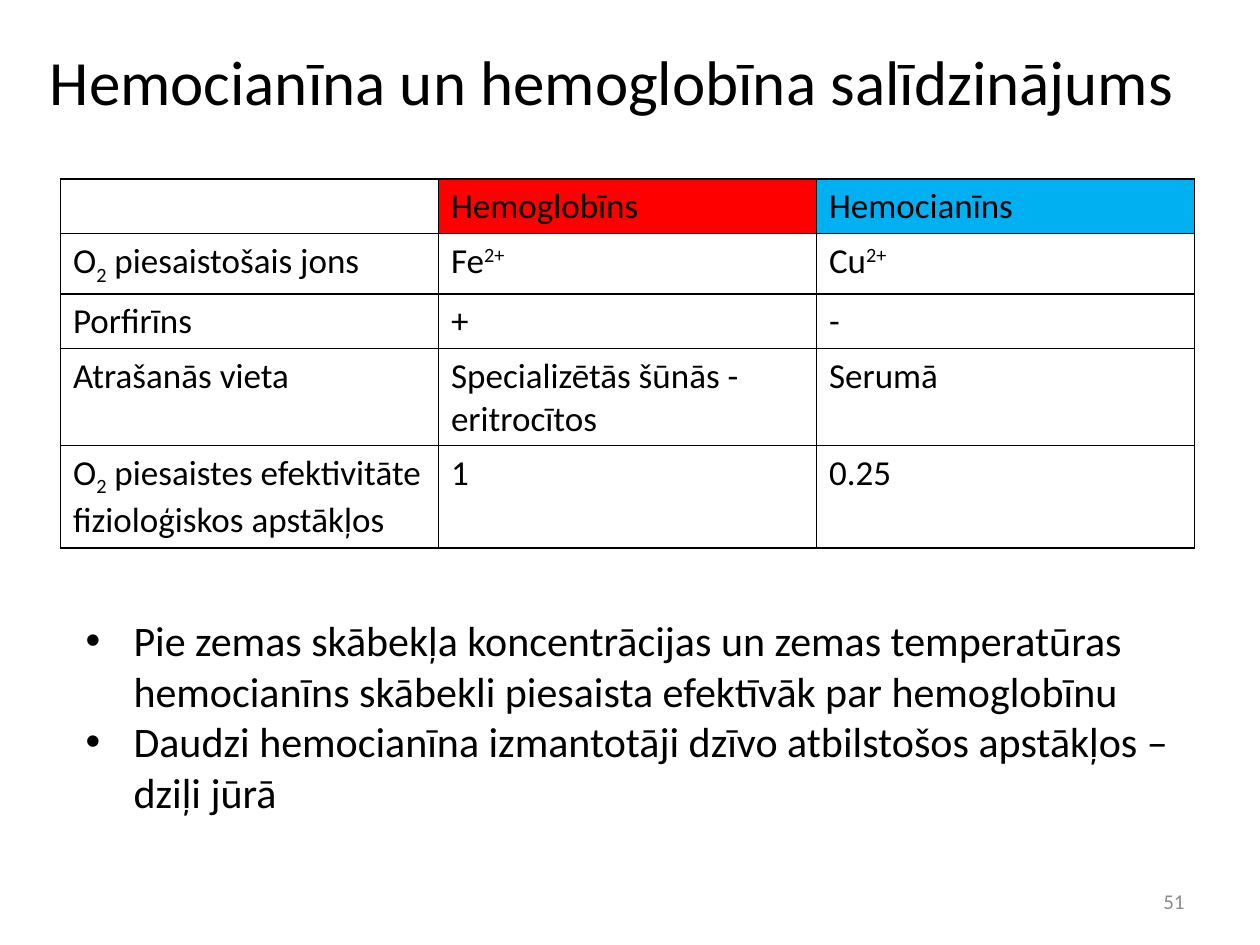
from lxml import etree
from pptx import Presentation
from pptx.dml.color import RGBColor
from pptx.enum.text import MSO_ANCHOR, MSO_AUTO_SIZE, PP_ALIGN
from pptx.oxml.ns import qn
from pptx.util import Inches, Pt

CENTER, RIGHT = PP_ALIGN.CENTER, PP_ALIGN.RIGHT
TOP, MIDDLE = MSO_ANCHOR.TOP, MSO_ANCHOR.MIDDLE
FIT_SHAPE, NO_FIT = MSO_AUTO_SIZE.SHAPE_TO_FIT_TEXT, MSO_AUTO_SIZE.NONE

COLORS = {"ink": "000000", "hemoglobin": "FF0000", "hemocyanin": "00B0F0", "number": "8C8C8C"}
SUB, SUPER = -25, 30

TITLE = "Hemocianīna un hemoglobīna salīdzinājums"
COMPARISON = [
    ["", "Hemoglobīns", "Hemocianīns"],
    [["O", ("2", SUB), " piesaistošais jons"], ["Fe", ("2+", SUPER)], ["Cu", ("2+", SUPER)]],
    ["Porfirīns", "+", "-"],
    ["Atrašanās vieta", "Specializētās šūnās - eritrocītos", "Serumā"],
    [["O", ("2", SUB), " piesaistes efektivitāte fizioloģiskos apstākļos"], "1", "0.25"],
]
HEADER_FILLS = [None, "hemoglobin", "hemocyanin"]
CONCLUSIONS = [
    "Pie zemas skābekļa koncentrācijas un zemas temperatūras hemocianīns "
    "skābekli piesaista efektīvāk par hemoglobīnu",
    "Daudzi hemocianīna izmantotāji dzīvo atbilstošos apstākļos – dziļi jūrā",
]


class ComparisonSlide:
    font_name = "Calibri"
    columns, rows = 100, 75

    def __init__(self, deck):
        self.deck = deck
        self.page = deck.slides.add_slide(deck.slide_layouts[1])

    def area(self, left, top, width, height):
        column = self.deck.slide_width / self.columns
        row = self.deck.slide_height / self.rows
        return [round(n * unit) for n, unit in
                zip((left, top, width, height), (column, row, column, row))]

    def place(self, shape, area):
        shape.left, shape.top, shape.width, shape.height = self.area(*area)

    def format(self, para, size, color="ink"):
        for span in para.runs:
            span.font.name = self.font_name
            span.font.size = Pt(size)
            span.font.color.rgb = RGBColor.from_string(COLORS[color])

    def title(self, text, area):
        shape = self.page.shapes.title
        self.place(shape, area)
        frame = shape.text_frame
        frame.text = text
        frame.auto_size = NO_FIT
        frame.vertical_anchor = MIDDLE
        frame.paragraphs[0].alignment = CENTER
        self.format(frame.paragraphs[0], 36)

    def bullets(self, items, area):
        shape = self.page.placeholders[1]
        self.place(shape, area)
        frame = shape.text_frame
        frame.text = "\n".join(items)
        frame.auto_size = FIT_SHAPE
        frame.vertical_anchor = TOP
        indent = Inches(0.38)
        for para in frame.paragraphs:
            properties = para._p.get_or_add_pPr()
            properties.set("marL", str(indent))
            properties.set("indent", str(-indent))
            etree.SubElement(properties, qn("a:buFont"), typeface="Arial")
            etree.SubElement(properties, qn("a:buChar"), char="•")
            para.space_before = Pt(0)
            self.format(para, 24)

    def cell(self, cell, content, fill):
        para = cell.text_frame.paragraphs[0]
        for part in [content] if isinstance(content, str) else content:
            text, baseline = (part, 0) if isinstance(part, str) else part
            span = para.add_run()
            span.text = text
            if baseline:
                span.font._element.set("baseline", str(baseline * 1000))
        self.format(para, 20)
        properties = cell._tc.get_or_add_tcPr()
        for side in ("lnL", "lnR", "lnT", "lnB"):
            line = etree.SubElement(properties, qn(f"a:{side}"), w=str(Pt(1)))
            solid = etree.SubElement(line, qn("a:solidFill"))
            etree.SubElement(solid, qn("a:srgbClr"), val=COLORS["ink"])
        if fill:
            cell.fill.solid()
            cell.fill.fore_color.rgb = RGBColor.from_string(COLORS[fill])
        else:
            cell.fill.background()

    def table(self, content, header_fills, area):
        table = self.page.shapes.add_table(
            len(content), len(content[0]), *self.area(*area)).table
        table.first_row = table.horz_banding = False
        for row, texts in enumerate(content):
            for column, text in enumerate(texts):
                fill = header_fills[column] if row == 0 else None
                self.cell(table.cell(row, column), text, fill)

    def number(self, text, area):
        box = self.page.shapes.add_textbox(*self.area(*area))
        frame = box.text_frame
        frame.word_wrap = True
        frame.vertical_anchor = MIDDLE
        frame.text = text
        frame.paragraphs[0].alignment = RIGHT
        self.format(frame.paragraphs[0], 12, "number")


def main():
    deck = Presentation()
    deck.slide_width, deck.slide_height = Inches(10), Inches(7.5)
    slide = ComparisonSlide(deck)
    slide.title(TITLE, (2.3, 0.1, 92.5, 12.5))
    slide.table(COMPARISON, HEADER_FILLS, (4.8, 14.2, 90, 20.5))
    slide.bullets(CONCLUSIONS, (5.8, 48.3, 89, 17.2))
    slide.number("51", (71.7, 69.5, 23.3, 4))
    deck.save("out.pptx")


if __name__ == "__main__":
    main()
